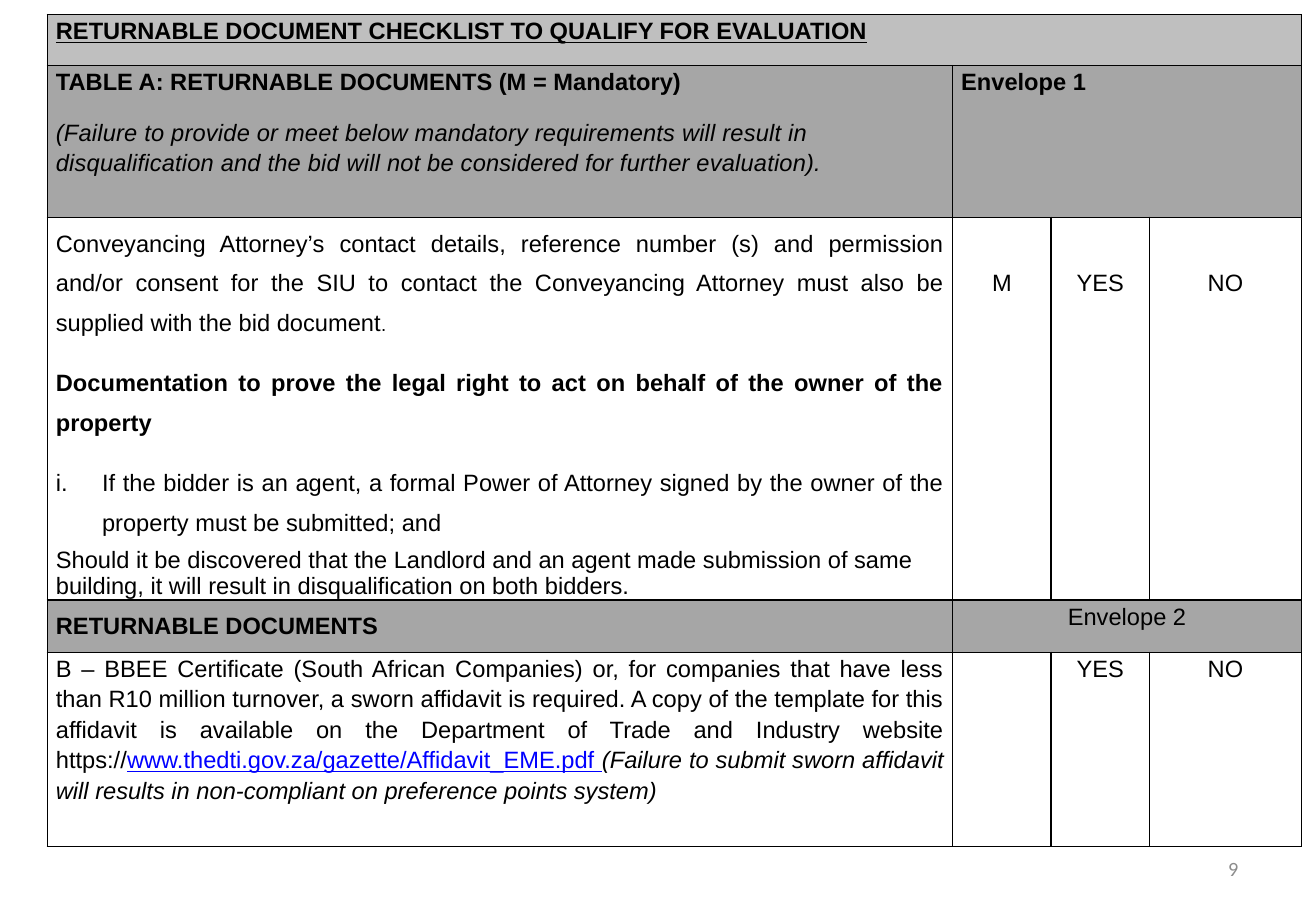
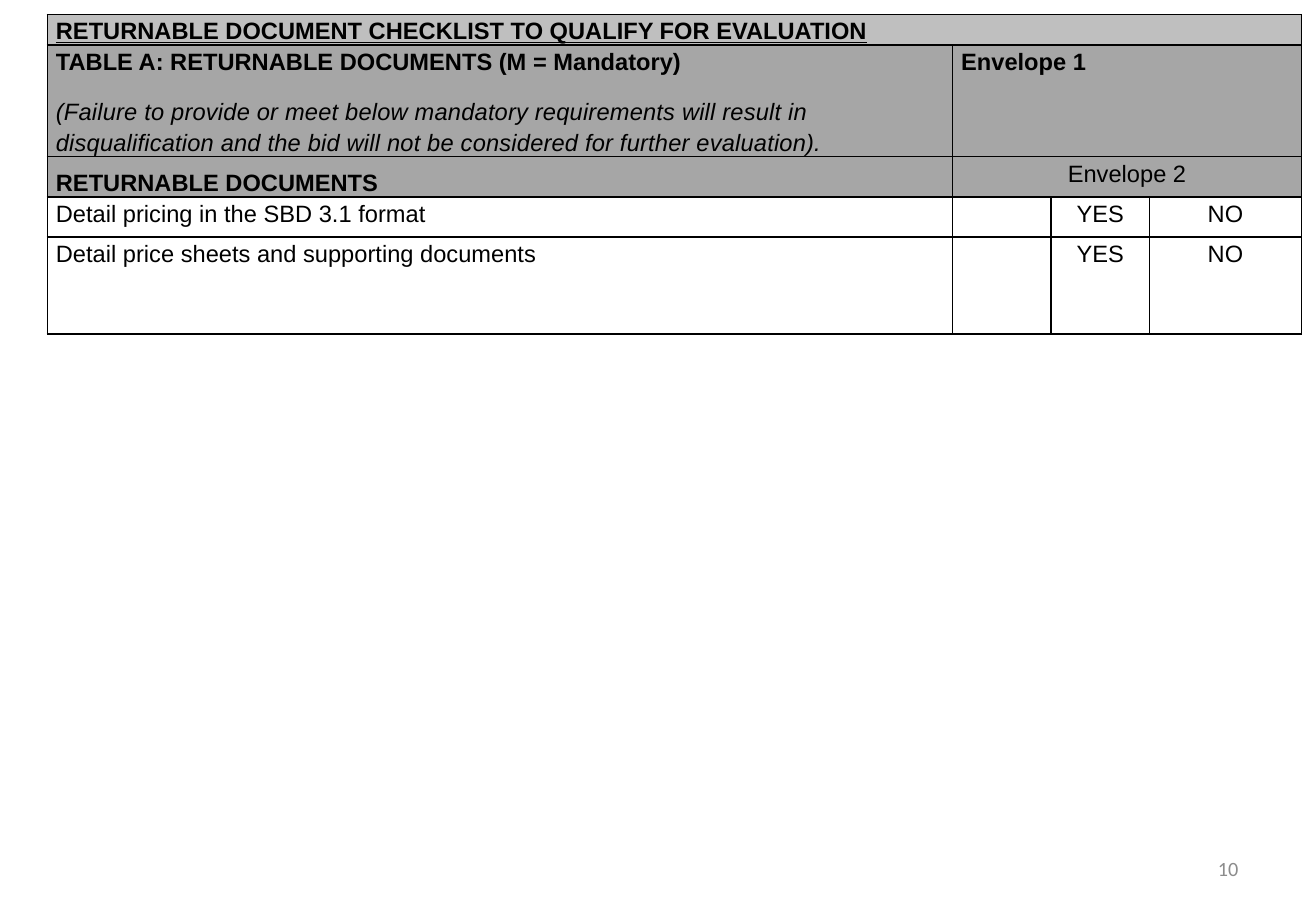
from dataclasses import dataclass

from lxml import etree
from pptx import Presentation
from pptx.dml.color import RGBColor
from pptx.enum.text import MSO_ANCHOR, PP_ALIGN
from pptx.oxml.ns import qn
from pptx.util import Inches, Pt

LEFT, CENTER = PP_ALIGN.LEFT, PP_ALIGN.CENTER
RIGHT, JUSTIFY = PP_ALIGN.RIGHT, PP_ALIGN.JUSTIFY
MIDDLE = MSO_ANCHOR.MIDDLE

BLACK = RGBColor(0x00, 0x00, 0x00)
LIGHT_GREY = RGBColor(0xBF, 0xBF, 0xBF)
MID_GREY = RGBColor(0xA6, 0xA6, 0xA6)
NUMBER_GREY = RGBColor(0x8C, 0x8C, 0x8C)
LINK_BLUE = RGBColor(0x00, 0x00, 0xFF)

TIGHT_LINE, NORMAL_LINE, WIDE_LINE = Pt(15.7), Pt(18), Pt(23.6)


@dataclass
class TextRun:
    text: str
    bold: bool = False
    italic: bool = False
    underline: bool = False
    size: float = 14
    color: RGBColor = BLACK
    spacing: float = 0


@dataclass
class TextBlock:
    runs: list
    align: PP_ALIGN = LEFT
    line_spacing: Pt = NORMAL_LINE
    before: float = 6
    after: float = 6
    roman: bool = False


@dataclass
class CellContent:
    blocks: list
    fill: RGBColor = None
    span: int = 1
    top: float = 0


def answer(text, top=0, **cell_options):
    block = TextBlock([TextRun(text)], CENTER, before=0, after=10)
    return CellContent([block], top=top, **cell_options)


def answers(*texts, top=0):
    return [answer(text, top) if text else CellContent([]) for text in texts]


def requirement(*runs):
    return CellContent([TextBlock(list(runs), JUSTIFY)])


TITLE_ROW = [CellContent([TextBlock([TextRun(
    "RETURNABLE DOCUMENT CHECKLIST TO QUALIFY FOR EVALUATION",
    bold=True, underline=True)])], LIGHT_GREY, span=4)]

MANDATORY_ROW = [
    CellContent([
        TextBlock([TextRun("TABLE A: RETURNABLE DOCUMENTS (M = Mandatory)", bold=True)]),
        TextBlock([TextRun(
            "(Failure to provide or meet below mandatory requirements will result in "
            "disqualification and the bid will not be considered for further evaluation).",
            italic=True, spacing=0.1)]),
    ], MID_GREY),
    CellContent([TextBlock([TextRun("Envelope 1", bold=True)])], MID_GREY, span=3),
]

RETURNABLE_ROW = [
    CellContent([TextBlock([TextRun("RETURNABLE DOCUMENTS", bold=True)],
                           JUSTIFY, WIDE_LINE)], MID_GREY),
    answer("Envelope 2", fill=MID_GREY, span=3),
]

ATTORNEY_ROW = [
    CellContent([
        TextBlock([
            TextRun("Conveyancing Attorney’s contact details, reference number (s) and "
                    "permission and/or consent for the SIU to contact the Conveyancing "
                    "Attorney must also be supplied with the bid document"),
            TextRun(". ", size=11),
        ], JUSTIFY, WIDE_LINE),
        TextBlock([TextRun("Documentation to prove the legal right to act on behalf of "
                           "the owner of the property", bold=True)], JUSTIFY, WIDE_LINE),
        TextBlock([TextRun("If the bidder is an agent, a formal Power of Attorney signed by "
                           "the owner of the property must be submitted; and")],
                  JUSTIFY, WIDE_LINE, roman=True),
        TextBlock([TextRun("Should it be discovered that the Landlord and an agent made "
                           "submission of same building, it will result in "
                           "disqualification on both bidders.")],
                  line_spacing=TIGHT_LINE, before=0, after=0),
    ]),
    *answers("M", "YES", "NO", top=0.4),
]

CERTIFICATE_ROW = [
    requirement(
        TextRun("B – BBEE Certificate (South African Companies) or, for companies that have "
                "less than R10 million turnover, a sworn affidavit is required. A copy of the "
                "template for this affidavit is available on the Department of Trade and "
                "Industry website https://"),
        TextRun("www.thedti.gov.za/gazette/Affidavit_EME.pdf ", underline=True, color=LINK_BLUE),
        TextRun("(Failure to submit sworn affidavit will results in non-compliant on "
                "preference points system)", italic=True),
    ),
    *answers("", "YES", "NO"),
]

PRICING_ROWS = [
    [requirement(TextRun(text)), *answers("", "YES", "NO")]
    for text in ("Detail pricing in the SBD 3.1 format",
                 "Detail price sheets and supporting documents")
]


class ChecklistDeck:
    table_font = "Arial"
    number_font = "Calibri"
    column_widths = (7.45, 0.81, 0.81, 1.25)
    side_margin = 0.07
    border_width = 1

    def __init__(self):
        self.presentation = Presentation()
        self.presentation.slide_width = Inches(10.83)
        self.presentation.slide_height = Inches(7.5)
        self.slide = None

    def add_slide(self, number):
        self.slide = self.presentation.slides.add_slide(self.presentation.slide_layouts[6])
        self.add_number(number)

    def add_number(self, number):
        box = self.slide.shapes.add_textbox(
            Inches(7.76), Inches(6.95), Inches(2.53), Inches(0.4))
        frame = box.text_frame
        frame.word_wrap = True
        frame.vertical_anchor = MIDDLE
        frame.text = str(number)
        paragraph = frame.paragraphs[0]
        paragraph.alignment = RIGHT
        font = paragraph.runs[0].font
        font.name, font.size = self.number_font, Pt(12)
        font.color.rgb = NUMBER_GREY

    def add_checklist(self, rows, heights):
        table = self.slide.shapes.add_table(
            len(rows), len(self.column_widths), Inches(0.39), Inches(0.12),
            Inches(sum(self.column_widths)), Inches(sum(heights))).table
        table.first_row = table.horz_banding = False
        for column, width in zip(table.columns, self.column_widths):
            column.width = Inches(width)
        for row, height in zip(table.rows, heights):
            row.height = Inches(height)
            for cell in row.cells:
                self.draw_borders(cell)
                cell.fill.background()
        for row_index, contents in enumerate(rows):
            column_index = 0
            for content in contents:
                cell = table.cell(row_index, column_index)
                column_index += content.span
                if content.span > 1:
                    cell.merge(table.cell(row_index, column_index - 1))
                self.fill_cell(cell, content)

    def draw_borders(self, cell):
        properties = cell._tc.get_or_add_tcPr()
        for side in ("a:lnL", "a:lnR", "a:lnT", "a:lnB"):
            line = etree.SubElement(properties, qn(side), w=str(Pt(self.border_width)))
            solid = etree.SubElement(line, qn("a:solidFill"))
            etree.SubElement(solid, qn("a:srgbClr"), val=str(BLACK))

    def fill_cell(self, cell, content):
        cell.margin_left = cell.margin_right = Inches(self.side_margin)
        cell.margin_top, cell.margin_bottom = Inches(content.top), 0
        if content.fill is not None:
            cell.fill.solid()
            cell.fill.fore_color.rgb = content.fill
        frame = cell.text_frame
        for index, block in enumerate(content.blocks):
            paragraph = frame.add_paragraph() if index else frame.paragraphs[0]
            self.write_block(paragraph, block)

    def write_block(self, paragraph, block):
        paragraph.alignment = block.align
        paragraph.line_spacing = block.line_spacing
        paragraph.space_before = Pt(block.before)
        paragraph.space_after = Pt(block.after)
        if block.roman:
            properties = paragraph._p.get_or_add_pPr()
            properties.set("marL", str(Inches(0.38)))
            properties.set("indent", str(Inches(-0.38)))
            etree.SubElement(properties, qn("a:buFont"), typeface=self.table_font)
            etree.SubElement(properties, qn("a:buAutoNum"), type="romanLcPeriod")
        for text_run in block.runs:
            run = paragraph.add_run()
            run.text = text_run.text
            font = run.font
            font.name, font.size = self.table_font, Pt(text_run.size)
            font.bold, font.italic = text_run.bold, text_run.italic
            font.underline = text_run.underline
            font.color.rgb = text_run.color
            if text_run.spacing:
                run._r.get_or_add_rPr().set("spc", str(round(text_run.spacing * 100)))


def main():
    deck = ChecklistDeck()
    deck.add_slide(9)
    deck.add_checklist(
        [TITLE_ROW, MANDATORY_ROW, ATTORNEY_ROW, RETURNABLE_ROW, CERTIFICATE_ROW],
        (0.42, 1.25, 3.15, 0.43, 1.6))
    deck.add_slide(10)
    deck.add_checklist(
        [TITLE_ROW, MANDATORY_ROW, RETURNABLE_ROW, *PRICING_ROWS],
        (0.25, 0.92, 0.33, 0.33, 0.8))
    deck.presentation.save("out.pptx")


if __name__ == "__main__":
    main()
